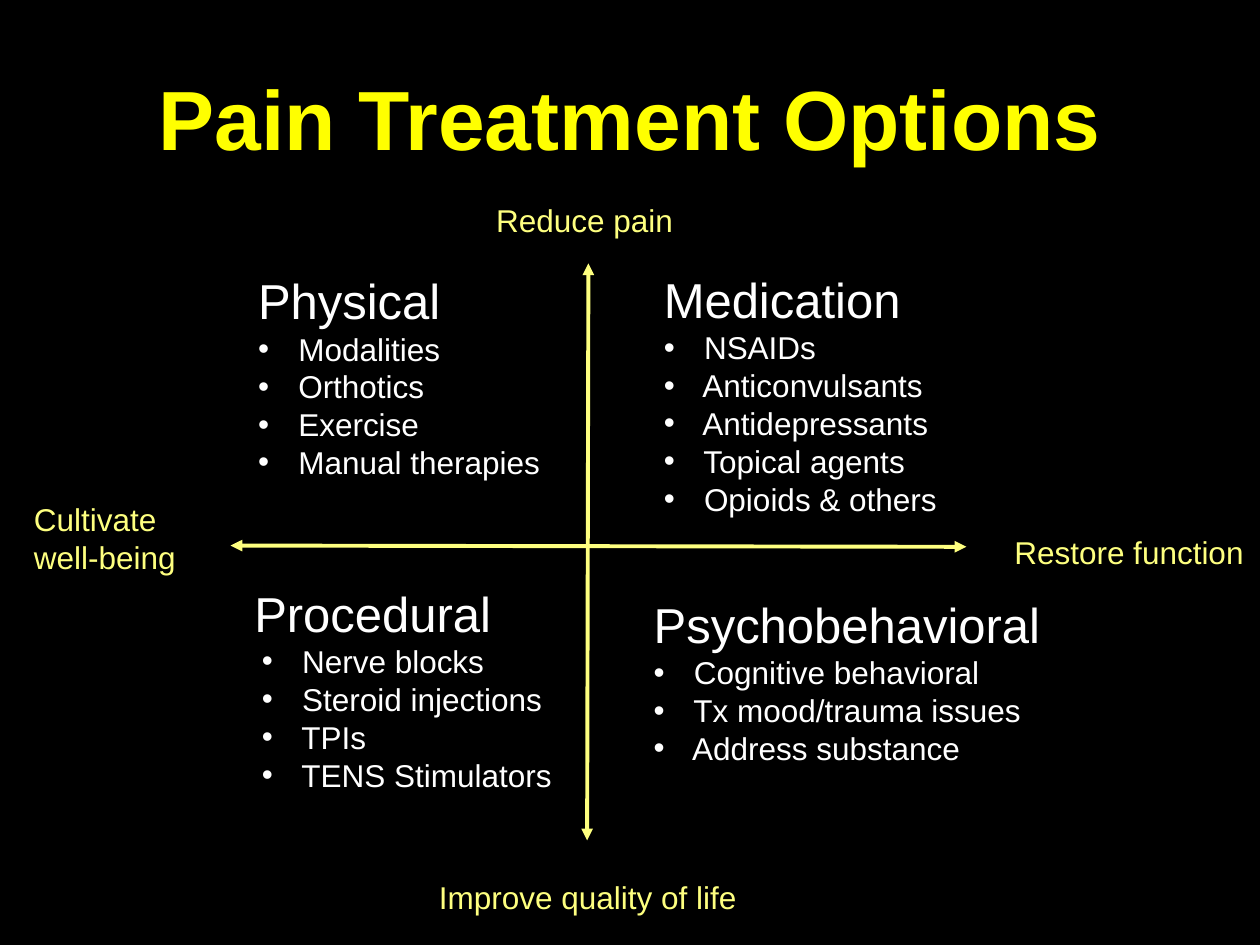
import pptx
import pptx.dml.color
import pptx.enum.shapes
import pptx.enum.text
import pptx.util
from lxml import etree
from pptx.oxml.ns import qn

Inches = pptx.util.Inches
ALIGN = pptx.enum.text.PP_ALIGN
ANCHOR = pptx.enum.text.MSO_ANCHOR

FONT = "Arial"
BLACK, WHITE, YELLOW, PALE_YELLOW = "000000", "FFFFFF", "FFFF00", "FEFF7F"
HANG = 0.25

TITLE = "Pain Treatment Options"

# (left, top, width, height), bullet text indent, heading, treatments
QUADRANTS = [
    ((5.09, 4.67, 3.67, 1.78), 0.25, "Psychobehavioral",
     ["Cognitive behavioral", "Tx mood/trauma issues", "Address substance"]),
    ((1.92, 4.58, 2.67, 2.09), 0.31, "Procedural",
     ["Nerve blocks", "Steroid injections", "TPIs", "TENS Stimulators"]),
    ((1.95, 2.1, 2.67, 2.09), 0.25, "Physical",
     ["Modalities", "Orthotics", "Exercise", "Manual therapies"]),
    ((5.17, 2.09, 2.5, 2.09), 0.25, "Medication",
     ["NSAIDs", "Anticonvulsants", "Antidepressants", "Topical agents",
      "Opioids & others"]),
]

# (left, top, width, height), alignment, lines
GOALS = [
    ((3.84, 1.55, 1.67, 0.4), ALIGN.LEFT, ["Reduce pain"]),
    ((3.25, 6.92, 2.83, 0.4), ALIGN.CENTER, ["Improve quality of life"]),
    ((7.67, 4.18, 2.58, 0.4), ALIGN.CENTER, ["Restore function"]),
    ((0.17, 3.92, 1.42, 0.71), ALIGN.LEFT, ["Cultivate", "well-being"]),
]

# x and y of the start, x and y of the end
AXES = [(4.67, 2.09, 4.66, 6.67), (1.83, 4.33, 7.67, 4.34)]


def rgb(color):
    return pptx.dml.color.RGBColor.from_string(color)


def add_frame(slide, place, anchor=ANCHOR.TOP):
    frame = slide.shapes.add_textbox(*map(Inches, place)).text_frame
    frame.word_wrap = True
    frame.vertical_anchor = anchor
    return frame


def add_line(frame, text, size, color, align=ALIGN.LEFT, bold=False):
    """Write one paragraph, using the frame's empty first one if it is free."""
    first = frame.paragraphs[0]
    paragraph = frame.add_paragraph() if first.runs else first
    paragraph.alignment = align
    run = paragraph.add_run()
    run.text = text
    run.font.name = FONT
    run.font.size = pptx.util.Pt(size)
    run.font.bold = bold
    run.font.color.rgb = rgb(color)
    return paragraph


def add_bullet(paragraph, indent):
    properties = paragraph._p.get_or_add_pPr()
    properties.set("marL", str(Inches(indent)))
    properties.set("indent", str(-Inches(HANG)))
    etree.SubElement(properties, qn("a:buFont"), typeface=FONT)
    etree.SubElement(properties, qn("a:buChar"), char="•")


def add_axis(slide, ends):
    axis = slide.shapes.add_connector(
        pptx.enum.shapes.MSO_CONNECTOR.STRAIGHT, *map(Inches, ends))
    axis.line.color.rgb = rgb(PALE_YELLOW)
    axis.line.width = pptx.util.Pt(2.25)
    outline = axis.line._get_or_add_ln()
    for end in ("a:headEnd", "a:tailEnd"):
        etree.SubElement(outline, qn(end), type="triangle")
    etree.SubElement(axis._element.spPr, qn("a:effectLst"))


def main():
    deck = pptx.Presentation()
    deck.slide_width, deck.slide_height = Inches(10), Inches(7.5)
    slide = deck.slides.add_slide(deck.slide_layouts[6])
    slide.background.fill.solid()
    slide.background.fill.fore_color.rgb = rgb(BLACK)

    title = add_frame(slide, (0.5, 0.3, 9, 1.25), ANCHOR.MIDDLE)
    add_line(title, TITLE, 48, YELLOW, ALIGN.CENTER, bold=True)

    for ends in AXES:
        add_axis(slide, ends)

    for place, indent, heading, treatments in QUADRANTS:
        quadrant = add_frame(slide, place)
        add_line(quadrant, heading, 28, WHITE)
        for treatment in treatments:
            add_bullet(add_line(quadrant, " " + treatment, 18, WHITE), indent)

    for place, align, lines in GOALS:
        goal = add_frame(slide, place)
        for line in lines:
            add_line(goal, line, 18, PALE_YELLOW, align)

    deck.save("out.pptx")


if __name__ == "__main__":
    main()
